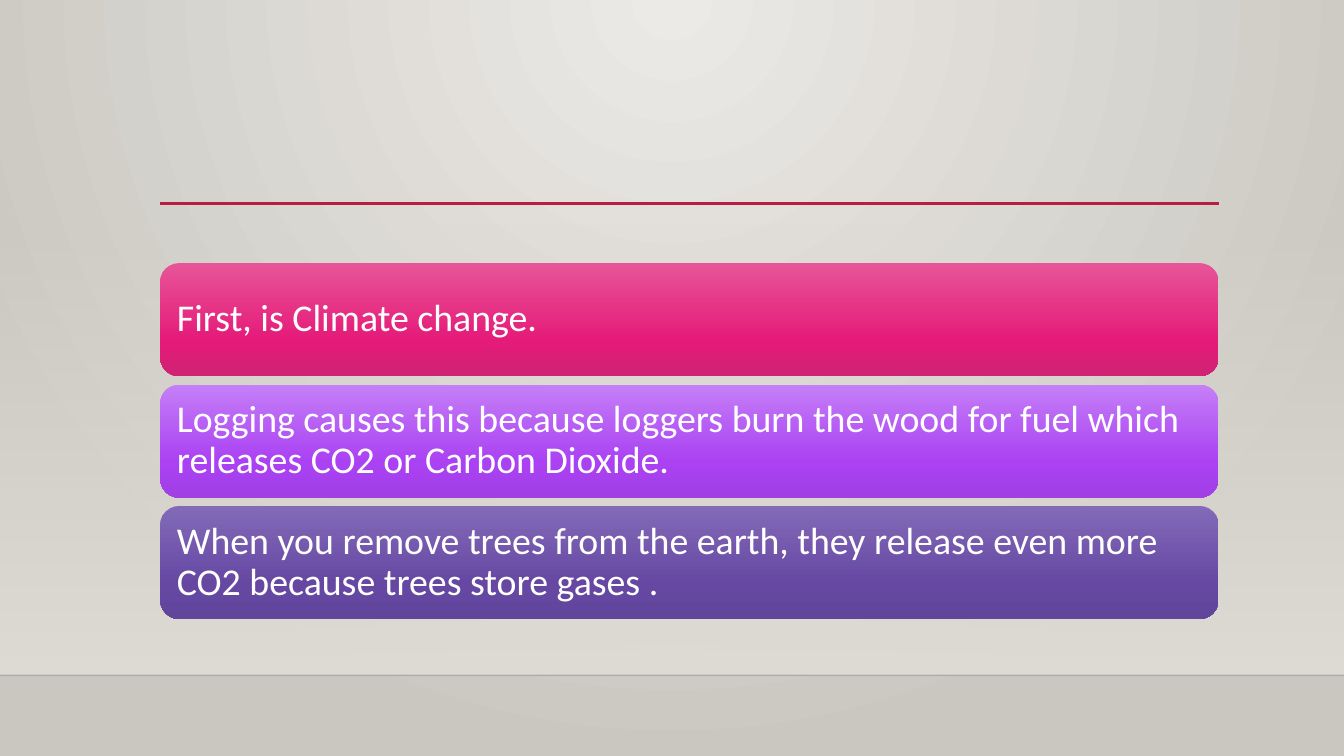
from dataclasses import dataclass

from lxml.etree import SubElement as Sub
from pptx import Presentation
from pptx.dml.color import RGBColor as Rgb
from pptx.enum.shapes import MSO_CONNECTOR as Conn, MSO_SHAPE as Geo
from pptx.enum.text import MSO_ANCHOR as Anchor, PP_ALIGN as Align
from pptx.oxml.ns import qn
from pptx.util import Cm, Pt


@dataclass(frozen=True)
class Theme:
    font: str = "Calibri"
    size: float = 27
    text: str = "FFFFFF"
    rule: str = "B71E42"
    edge: str = "000001"
    back: tuple = ((0, "ECEAE7"), (100, "CAC7C1"))
    wall: tuple = ((0, "DFDBD5", 0), (100, "DFDBD5"))
    pink: tuple = ((0, "E75597"), (69, "E51A79"), (100, "CF2374"))
    lilac: tuple = ((0, "C57FF7"), (69, "AA41F3"), (100, "A13FE5"))
    plum: tuple = ((0, "836AB8"), (69, "6648A3"), (100, "60459A"))


def fade(host, stops, focus=None):
    """Swap the solid fill in host for a gradient: downward, or round a focus."""
    old = host.find(qn("a:solidFill"))
    grad = host.makeelement(qn("a:gradFill"), {"rotWithShape": "1"})
    items = Sub(grad, qn("a:gsLst"))
    for pos, color, *alpha in stops:
        stop = Sub(items, qn("a:gs"), pos=str(pos * 1000))
        tint = Sub(stop, qn("a:srgbClr"), val=color)
        for value in alpha:
            Sub(tint, qn("a:alpha"), val=str(value * 1000))
    if focus:
        ring = Sub(grad, qn("a:path"), path="circle")
        sides = {side: str(part * 1000) for side, part in zip("ltrb", focus)}
        Sub(ring, qn("a:fillToRect"), sides)
    else:
        Sub(grad, qn("a:lin"), ang="5400000", scaled="0")
    host.replace(old, grad)


def write(frame, text, *, font, size, color, inset=0.28, lead=0.9):
    frame.word_wrap = True
    frame.vertical_anchor = Anchor.MIDDLE
    frame.margin_left = frame.margin_right = Cm(inset)
    frame.margin_top = frame.margin_bottom = Cm(inset)
    para = frame.paragraphs[0]
    para.alignment = Align.LEFT
    para.line_spacing = lead
    run = para.add_run()
    run.text = text
    run.font.name = font
    run.font.size = Pt(size)
    run.font.color.rgb = Rgb.from_string(color)


class Deck:
    """Holds the theme and the slide being drawn; lengths are in centimetres."""

    def __init__(self, theme, wide, high):
        self.theme = theme
        self.file = Presentation()
        self.file.slide_width, self.file.slide_height = Cm(wide), Cm(high)
        self.slide = self.file.slides.add_slide(self.file.slide_layouts[6])

    def back(self, stops, focus):
        self.slide.background.fill.solid()
        fade(self.slide.element.find(".//" + qn("p:bgPr")), stops, focus)

    def block(self, geo, left, top, wide, high, stops):
        shape = self.slide.shapes.add_shape(
            geo, Cm(left), Cm(top), Cm(wide), Cm(high))
        shape.shadow.inherit = False
        shape.line.fill.background()
        shape.fill.solid()
        fade(shape.element.spPr, stops)
        return shape

    def card(self, left, top, wide, high, stops, text):
        shape = self.block(Geo.ROUNDED_RECTANGLE, left, top, wide, high, stops)
        look = self.theme
        write(shape.text_frame, text,
              font=look.font, size=look.size, color=look.text)

    def rule(self, left, right, top, color, width, alpha=100):
        line = self.slide.shapes.add_connector(
            Conn.STRAIGHT, Cm(left), Cm(top), Cm(right), Cm(top))
        line.line.color.rgb = Rgb.from_string(color)
        line.line.width = Pt(width)
        props = line.element.spPr
        if alpha < 100:
            tint = props.find(".//" + qn("a:srgbClr"))
            Sub(tint, qn("a:alpha"), val=str(alpha * 1000))
        Sub(props, qn("a:effectLst"))


def main():
    look = Theme()
    wide, high = 33.87, 19.05
    wall, floor = 5.61, 17.02
    left, span = 4.04, 26.67
    first, tall, step = 6.63, 2.85, 3.06
    cards = (
        (look.pink, "First, is Climate change."),
        (look.lilac, "Logging causes this because loggers burn the wood for "
                     "fuel which releases CO2 or Carbon Dioxide."),
        (look.plum, "When you remove trees from the earth, they release even "
                    "more CO2 because trees store gases ."),
    )

    deck = Deck(look, wide, high)
    deck.back(look.back, focus=(43, 0, 43, 100))
    deck.block(Geo.RECTANGLE, 0, wall, wide, floor - wall, look.wall)
    deck.rule(0, wide, floor, look.edge, 1, alpha=20)
    deck.rule(left, left + span, 5.13, look.rule, 2.5)
    for row, (stops, text) in enumerate(cards):
        deck.card(left, first + row * step, span, tall, stops, text)
    deck.file.save("out.pptx")


if __name__ == "__main__":
    main()
